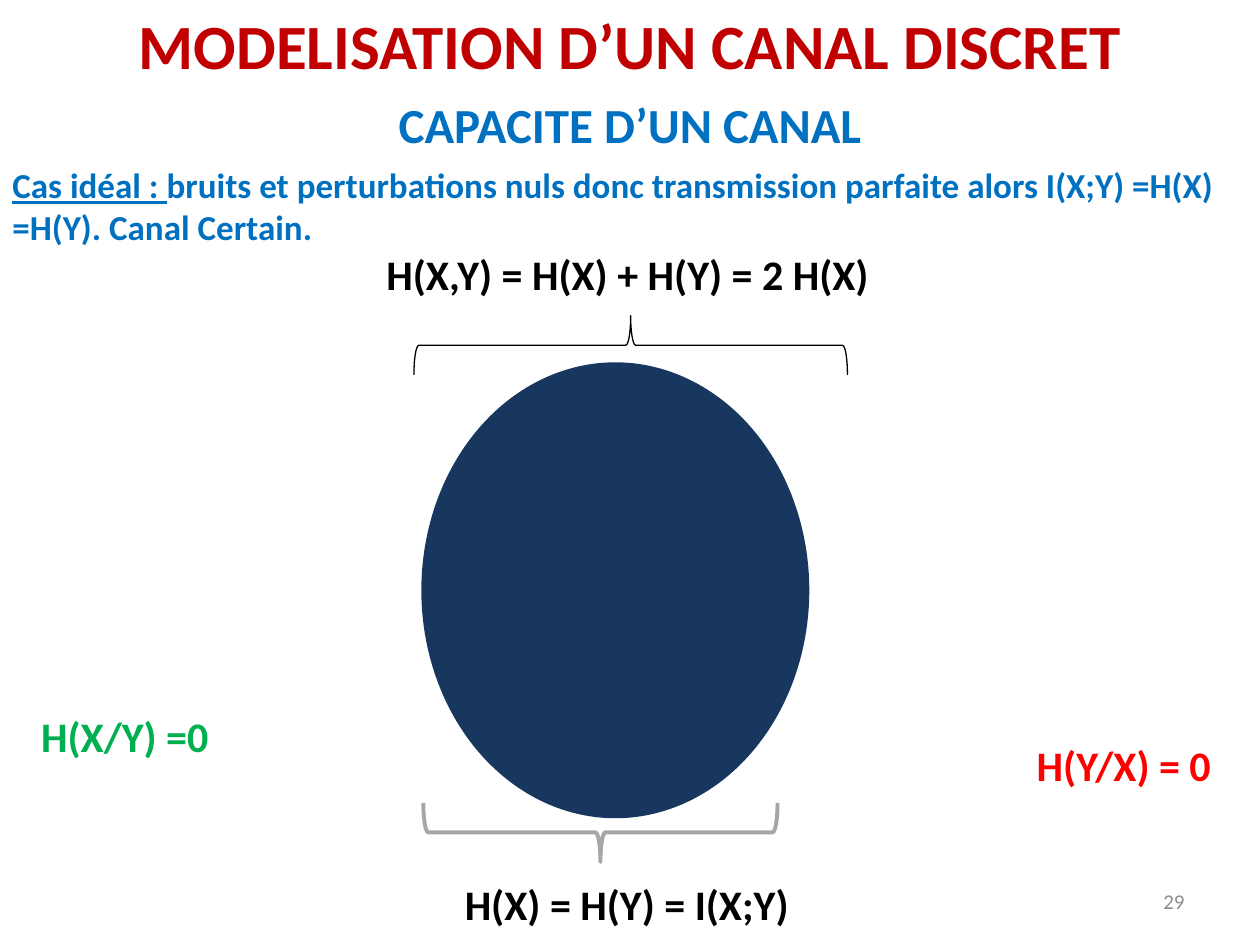
"""Build the slide on the capacity of an ideal discrete channel."""
from pptx import Presentation
from pptx.dml.color import RGBColor
from pptx.enum.shapes import MSO_SHAPE
from pptx.enum.text import MSO_ANCHOR, MSO_AUTO_SIZE, PP_ALIGN
from pptx.util import Cm, Pt

BLACK = RGBColor(0x00, 0x00, 0x00)
GREY = RGBColor(0x8C, 0x8C, 0x8C)
BRACE_GREY = RGBColor(0xA6, 0xA6, 0xA6)
NAVY = RGBColor(0x17, 0x37, 0x5E)
BLUE = RGBColor(0x00, 0x70, 0xC0)
GREEN = RGBColor(0x00, 0xB0, 0x50)
RED = RGBColor(0xFF, 0x00, 0x00)
DARK_RED = RGBColor(0xC0, 0x00, 0x00)

FONT = "Calibri"
WIDTH, HEIGHT = 25.4, 19.05
LABEL_HEIGHT = 1.27

TITLE = "MODELISATION D’UN CANAL DISCRET"
SUBTITLE = "CAPACITE D’UN CANAL"
IDEAL_CASE = [
    ("Cas idéal : ", True),
    ("bruits et perturbations nuls donc transmission parfaite alors "
     "I(X;Y) =H(X) =H(Y). Canal Certain.", False),
]
PAGE_NUMBER = "29"

FORMULAS = [
    ("H(X,Y) = H(X) + H(Y) = 2 H(X)", 7.54, 4.88, 10.52, BLACK),
    ("H(X) = H(Y) = I(X;Y)", 9.12, 17.58, 7.54, BLACK),
    ("H(X/Y) =0", 0.58, 14.2, 3.96, GREEN),
    ("H(Y/X) = 0", 20.65, 14.78, 4.17, RED),
]

OUTLINES = [
    (MSO_SHAPE.OVAL, (8.53, 7.34, 7.75, 9.12), 0, NAVY, NAVY, 2),
    (MSO_SHAPE.LEFT_BRACE, (11.51, 13.21, 1.19, 7.14), 270, None, BRACE_GREY, 2.25),
    (MSO_SHAPE.RIGHT_BRACE, (12.12, 2.59, 1.19, 8.74), 270, None, BLACK, 0.75),
]


def write(slide, text, box, *, size, color, bold=True, align=PP_ALIGN.LEFT,
          anchor=MSO_ANCHOR.TOP, wrap=True, holder=None):
    """Write a string or (text, underlined) pairs into a box or placeholder."""
    left, top, width, height = map(Cm, box)
    if holder is None:
        holder = slide.shapes.add_textbox(left, top, width, height)
    else:
        holder.left, holder.top, holder.width, holder.height = left, top, width, height
    frame = holder.text_frame
    frame.auto_size = MSO_AUTO_SIZE.NONE
    frame.word_wrap = wrap
    frame.vertical_anchor = anchor
    paragraph = frame.paragraphs[0]
    paragraph.alignment = align
    for words, underlined in [(text, False)] if isinstance(text, str) else text:
        run = paragraph.add_run()
        run.text = words
        run.font.name = FONT
        run.font.size = Pt(size)
        run.font.bold = bold
        run.font.underline = underlined
        run.font.color.rgb = color


def draw(slide, kind, box, rotation, fill, line, weight):
    """Draw one preset shape with its fill and outline."""
    outline = slide.shapes.add_shape(kind, *map(Cm, box))
    outline.rotation = rotation
    outline.shadow.inherit = False
    if fill is None:
        outline.fill.background()
    else:
        outline.fill.solid()
        outline.fill.fore_color.rgb = fill
    outline.line.color.rgb = line
    outline.line.width = Pt(weight)


def main():
    """Assemble and save the slide."""
    deck = Presentation()
    deck.slide_width, deck.slide_height = Cm(WIDTH), Cm(HEIGHT)
    slide = deck.slides.add_slide(deck.slide_layouts[5])

    write(slide, TITLE, (0, 0, WIDTH, 1.8), size=36, color=DARK_RED,
          align=PP_ALIGN.CENTER, holder=slide.shapes.title)
    write(slide, SUBTITLE, (0, 1.78, WIDTH, 2.24), size=28, color=BLUE,
          align=PP_ALIGN.CENTER)
    write(slide, IDEAL_CASE, (0, 3.18, WIDTH, 1.96), size=20, color=BLUE)
    for outline in OUTLINES:
        draw(slide, *outline)
    for formula, left, top, width, color in FORMULAS:
        write(slide, formula, (left, top, width, LABEL_HEIGHT), size=24,
              color=color, wrap=False)
    write(slide, PAGE_NUMBER, (18.21, 17.65, 5.92, 1.02), size=12, color=GREY,
          bold=False, align=PP_ALIGN.RIGHT, anchor=MSO_ANCHOR.MIDDLE)

    deck.save("out.pptx")


if __name__ == "__main__":
    main()
